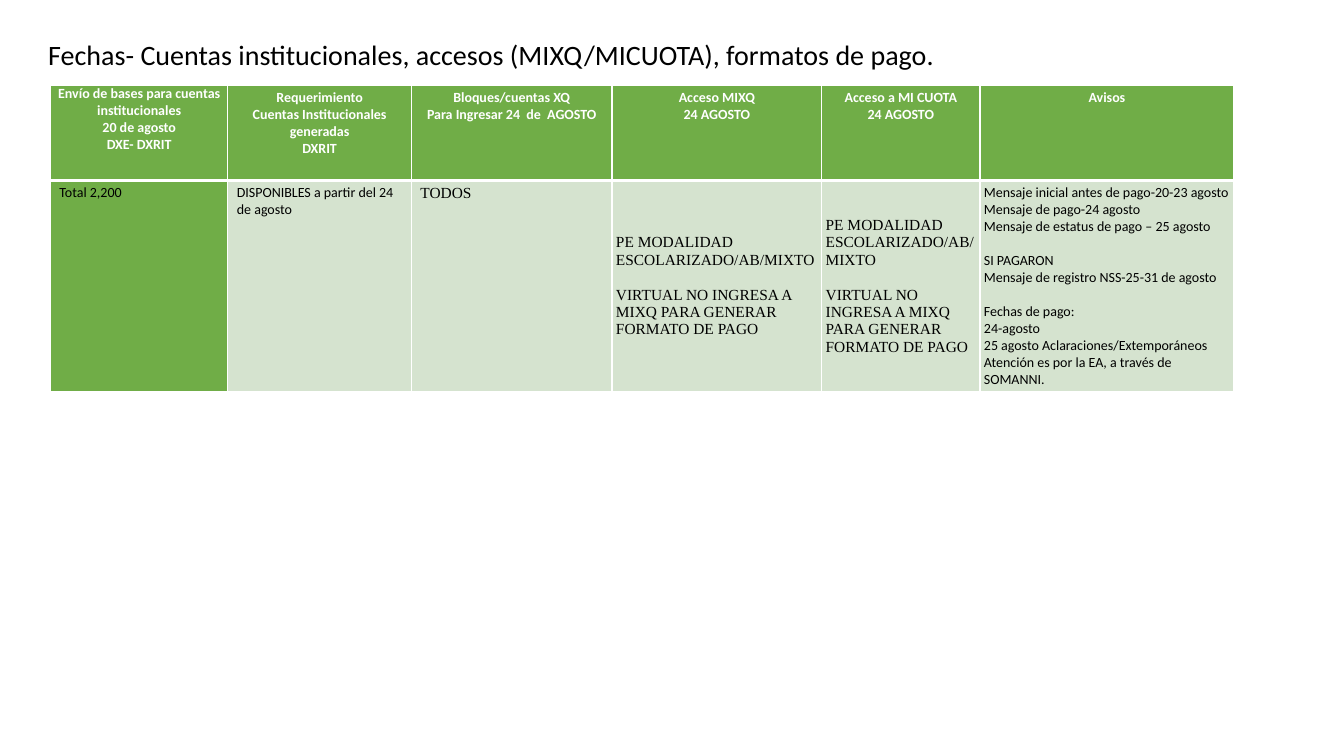
from dataclasses import dataclass

from lxml import etree
from pptx import Presentation
from pptx.dml.color import RGBColor
from pptx.enum.text import MSO_ANCHOR, PP_ALIGN
from pptx.oxml.ns import qn
from pptx.util import Inches, Pt

LEFT, CENTER = PP_ALIGN.LEFT, PP_ALIGN.CENTER
TOP, MIDDLE = MSO_ANCHOR.TOP, MSO_ANCHOR.MIDDLE


@dataclass(frozen=True)
class Theme:
    green: str = "70AD47"
    pale: str = "D5E3CF"
    white: str = "FFFFFF"
    black: str = "000000"
    sans: str = "Calibri"
    serif: str = "Times New Roman"
    title_size: int = 20
    sans_size: int = 10
    serif_size: int = 11
    thin: int = 1
    thick: int = 3


THEME = Theme()


@dataclass(frozen=True)
class TextStyle:
    font: str = THEME.sans
    size: int = THEME.sans_size
    color: str = THEME.black
    bold: bool = False
    align: PP_ALIGN = LEFT


@dataclass(frozen=True)
class CellContent:
    """Groups of paragraphs, parted by one line of space."""
    groups: list[list[str]]
    style: TextStyle
    fill: str = THEME.pale
    anchor: MSO_ANCHOR = TOP
    side: float = 0.09
    edge: float = 0.04


TITLE = "Fechas- Cuentas institucionales, accesos (MIXQ/MICUOTA), formatos de pago."
TITLE_STYLE = TextStyle(size=THEME.title_size)
HEADING = TextStyle(color=THEME.white, bold=True, align=CENTER)
BODY = TextStyle()
SERIF = TextStyle(font=THEME.serif, size=THEME.serif_size)

COLUMN_WIDTHS = [1.76, 1.82, 1.99, 2.08, 1.57, 2.52]
ROW_HEIGHTS = [0.94, 2.1]

HEADINGS = [
    ["Requerimiento", "Cuentas Institucionales generadas", "DXRIT"],
    ["Bloques/cuentas XQ", "Para Ingresar 24  de  AGOSTO"],
    ["Acceso MIXQ", "24 AGOSTO"],
    ["Acceso a MI CUOTA", "24 AGOSTO"],
    ["Avisos"],
]
FIRST_HEADING = ["Envío de bases para cuentas institucionales", "20 de agosto", "DXE- DXRIT"]
ACCESS = CellContent(
    [["PE MODALIDAD ESCOLARIZADO/AB/MIXTO"],
     ["VIRTUAL NO INGRESA A MIXQ PARA GENERAR FORMATO DE PAGO"]],
    SERIF, anchor=MIDDLE, side=0.04)
NOTICES = CellContent(
    [["Mensaje inicial antes de pago-20-23 agosto",
      "Mensaje de pago-24 agosto",
      "Mensaje de estatus de pago – 25 agosto"],
     ["SI PAGARON", "Mensaje de registro NSS-25-31 de agosto"],
     ["Fechas de pago:", "24-agosto",
      "25 agosto Aclaraciones/Extemporáneos Atención es por la EA, a través de SOMANNI."]],
    BODY, anchor=MIDDLE, side=0.04)

ROWS = [
    [CellContent([FIRST_HEADING], HEADING, THEME.green, side=0, edge=0)]
    + [CellContent([lines], HEADING, THEME.green) for lines in HEADINGS],
    [CellContent([["Total 2,200"]], BODY, THEME.green),
     CellContent([["DISPONIBLES a partir del 24 de agosto"]], BODY),
     CellContent([["TODOS"]], SERIF),
     ACCESS, ACCESS, NOTICES],
]


def write_groups(frame, groups: list[list[str]], style: TextStyle) -> None:
    para = frame.paragraphs[0]
    for group_index, lines in enumerate(groups):
        for line_index, line in enumerate(lines):
            if group_index or line_index:
                para = frame.add_paragraph()
            para.alignment = style.align
            if group_index and not line_index:
                para.space_before = Pt(style.size * 1.2)
            span = para.add_run()
            span.text = line
            span.font.name = style.font
            span.font.size = Pt(style.size)
            span.font.bold = style.bold
            span.font.color.rgb = RGBColor.from_string(style.color)


def set_borders(cell, widths: dict[str, int]) -> None:
    properties = cell._tc.get_or_add_tcPr()
    for index, (side, width) in enumerate(widths.items()):
        line = etree.Element(qn(f"a:ln{side}"), w=str(Pt(width)))
        fill = etree.SubElement(line, qn("a:solidFill"))
        etree.SubElement(fill, qn("a:srgbClr"), val=THEME.white)
        properties.insert(index, line)


def fill_cell(cell, content: CellContent, widths: dict[str, int]) -> None:
    cell.fill.solid()
    cell.fill.fore_color.rgb = RGBColor.from_string(content.fill)
    cell.margin_left = cell.margin_right = Inches(content.side)
    cell.margin_top = cell.margin_bottom = Inches(content.edge)
    cell.vertical_anchor = content.anchor
    write_groups(cell.text_frame, content.groups, content.style)
    set_borders(cell, widths)


def add_title(page) -> None:
    box = page.shapes.add_textbox(Inches(0.38), Inches(0.18), Inches(12.04), Inches(0.76))
    frame = box.text_frame
    frame.word_wrap = True
    frame.vertical_anchor = MIDDLE
    write_groups(frame, [[TITLE]], TITLE_STYLE)
    frame.paragraphs[0].line_spacing = 0.9


def add_schedule(page) -> None:
    table = page.shapes.add_table(
        len(ROWS), len(COLUMN_WIDTHS), Inches(0.5), Inches(0.85),
        Inches(sum(COLUMN_WIDTHS)), Inches(sum(ROW_HEIGHTS))).table
    for column, width in zip(table.columns, COLUMN_WIDTHS):
        column.width = Inches(width)
    for row, height in zip(table.rows, ROW_HEIGHTS):
        row.height = Inches(height)
    for row_index, contents in enumerate(ROWS):
        # A thick rule parts the headings from the body
        widths = dict.fromkeys("LRTB", THEME.thin)
        widths["T" if row_index else "B"] = THEME.thick
        for column_index, content in enumerate(contents):
            fill_cell(table.cell(row_index, column_index), content, widths)


def main() -> None:
    deck = Presentation()
    deck.slide_width, deck.slide_height = Inches(13.33), Inches(7.5)
    page = deck.slides.add_slide(deck.slide_layouts[6])
    # Title, then the table of dates
    add_title(page)
    add_schedule(page)
    deck.save("out.pptx")


if __name__ == "__main__":
    main()
